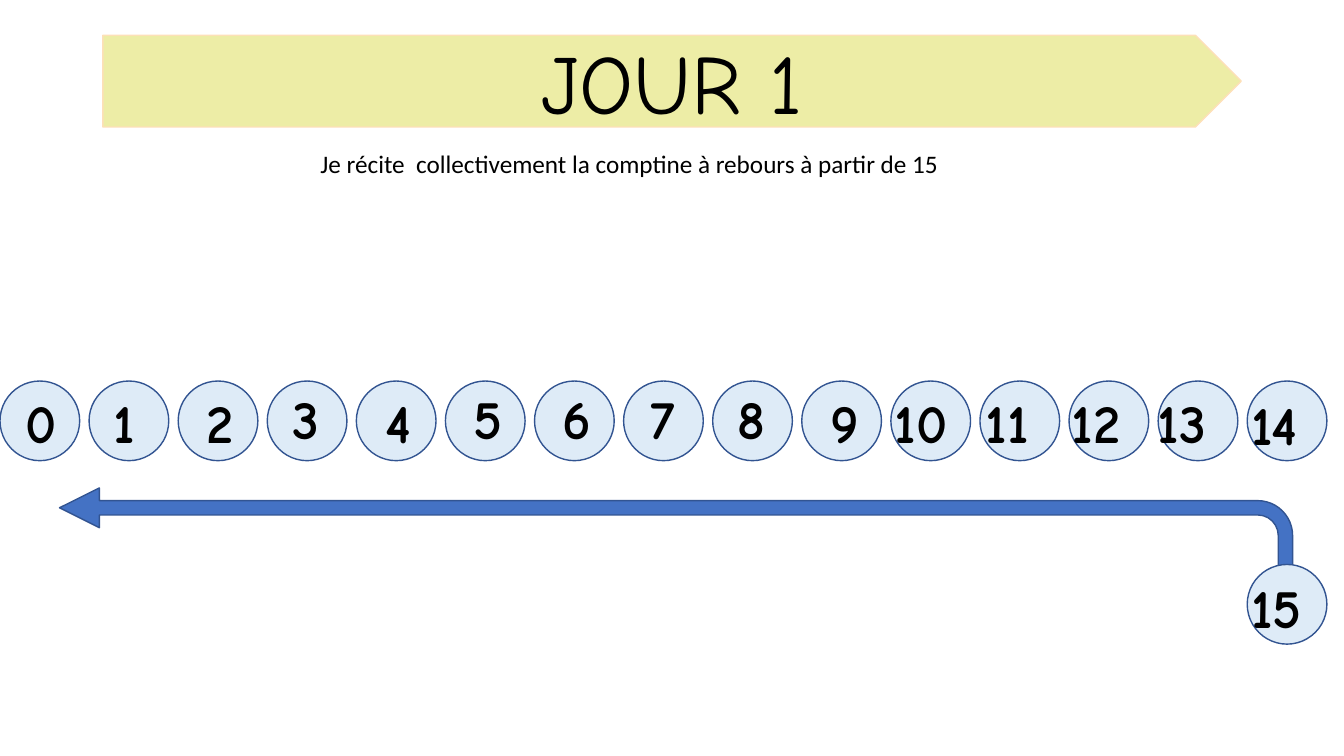
from dataclasses import dataclass

from pptx import Presentation
from pptx.dml.color import RGBColor
from pptx.enum.shapes import MSO_SHAPE as Preset
from pptx.enum.text import MSO_AUTO_SIZE as AutoSize, PP_ALIGN as Align
from pptx.util import Inches, Pt

COLORS = {
    "banner": "EDEDA6",
    "banner_line": "FDE0B8",
    "arrow": "4472C4",
    "counter": "DEEBF7",
    "outline": "325491",
    "text": "000000",
}
TITLE_FONT, BODY_FONT = "Comic Neue", "Calibri"

# Grid of counters: column pitch, row tops and counter diameter
PITCH = 12.37 / 14
ROW_TOPS = (3.78, 5.6)
DIAMETER = 0.79


@dataclass(frozen=True)
class Box:
    left: float
    top: float
    width: float
    height: float

    def lengths(self) -> tuple:
        return tuple(Inches(n) for n in (self.left, self.top, self.width, self.height))


@dataclass(frozen=True)
class Counter:
    value: int
    shift_x: float  # number's text box, measured from the circle's corner
    shift_y: float = 0.03
    row: int = 0

    @property
    def left(self) -> float:
        return min(self.value, 14) * PITCH

    @property
    def top(self) -> float:
        return ROW_TOPS[self.row]

    @property
    def text_width(self) -> float:
        return 0.87 if self.value < 10 else 1.2


COUNTERS = (
    Counter(0, 0.15),
    Counter(1, 0.14),
    Counter(2, 0.18),
    Counter(3, 0.15, -0.01),
    Counter(4, 0.19),
    Counter(5, 0.18, -0.01),
    Counter(6, 0.18, -0.01),
    Counter(7, 0.17, -0.01),
    Counter(8, 0.15, -0.01),
    Counter(9, 0.19),
    Counter(10, -0.06),
    Counter(11, -0.04),
    Counter(12, -0.07),
    Counter(13, -0.1),
    Counter(14, -0.06, 0.05),
    Counter(15, -0.06, 0.04, row=1),
)


def add_preset(shapes, preset: Preset, box: Box, fill: str, line: str):
    shape = shapes.add_shape(preset, *box.lengths())
    shape.shadow.inherit = False
    shape.fill.solid()
    shape.fill.fore_color.rgb = RGBColor.from_string(COLORS[fill])
    shape.line.color.rgb = RGBColor.from_string(COLORS[line])
    shape.line.width = Pt(1)
    return shape


def add_text(shapes, text: str, box: Box, size: float, font: str = TITLE_FONT,
             bold: bool = False, align: Align = Align.LEFT) -> None:
    frame = shapes.add_textbox(*box.lengths()).text_frame
    frame.word_wrap = True
    frame.auto_size = AutoSize.SHAPE_TO_FIT_TEXT
    paragraph = frame.paragraphs[0]
    paragraph.text = text
    paragraph.alignment = align
    paragraph.font.name = font
    paragraph.font.size = Pt(size)
    paragraph.font.bold = bold
    paragraph.font.color.rgb = RGBColor.from_string(COLORS["text"])


def add_banner(shapes) -> None:
    banner = shapes.add_group_shape().shapes
    add_preset(banner, Preset.PENTAGON, Box(1.02, 0.35, 11.29, 0.91), "banner", "banner_line")
    add_text(banner, "JOUR 1", Box(2.91, 0.25, 7.51, 1.11), 60, align=Align.CENTER)


def add_countdown_arrow(shapes) -> None:
    arrow = add_preset(shapes, Preset.BENT_ARROW, Box(0.59, 4.84, 12.23, 0.79), "arrow", "outline")
    for index, value in enumerate((0.18, 0.25, 0.5, 0.438)):
        arrow.adjustments[index] = value
    # A half turn and a vertical flip point the head to the left
    arrow.rotation = 180
    arrow.element.spPr.get_or_add_xfrm().set("flipV", "1")


def add_counter(shapes, counter: Counter) -> None:
    circle = Box(counter.left, counter.top, DIAMETER, DIAMETER)
    add_preset(shapes, Preset.OVAL, circle, "counter", "outline")
    label = Box(counter.left + counter.shift_x, counter.top + counter.shift_y,
                counter.text_width, 0.76)
    add_text(shapes, str(counter.value), label, 39, bold=True)


def main() -> None:
    presentation = Presentation()
    presentation.slide_width, presentation.slide_height = Inches(13.33), Inches(7.5)
    slide = presentation.slides.add_slide(presentation.slide_layouts[6])

    # Title and instruction
    add_banner(slide.shapes)
    add_text(slide.shapes, "Je récite  collectivement la comptine à rebours à partir de 15",
             Box(3.08, 1.42, 7.38, 0.4), 18, BODY_FONT)

    # Number line and countdown
    add_countdown_arrow(slide.shapes)
    for counter in COUNTERS:
        add_counter(slide.shapes, counter)

    presentation.save("out.pptx")


if __name__ == "__main__":
    main()
